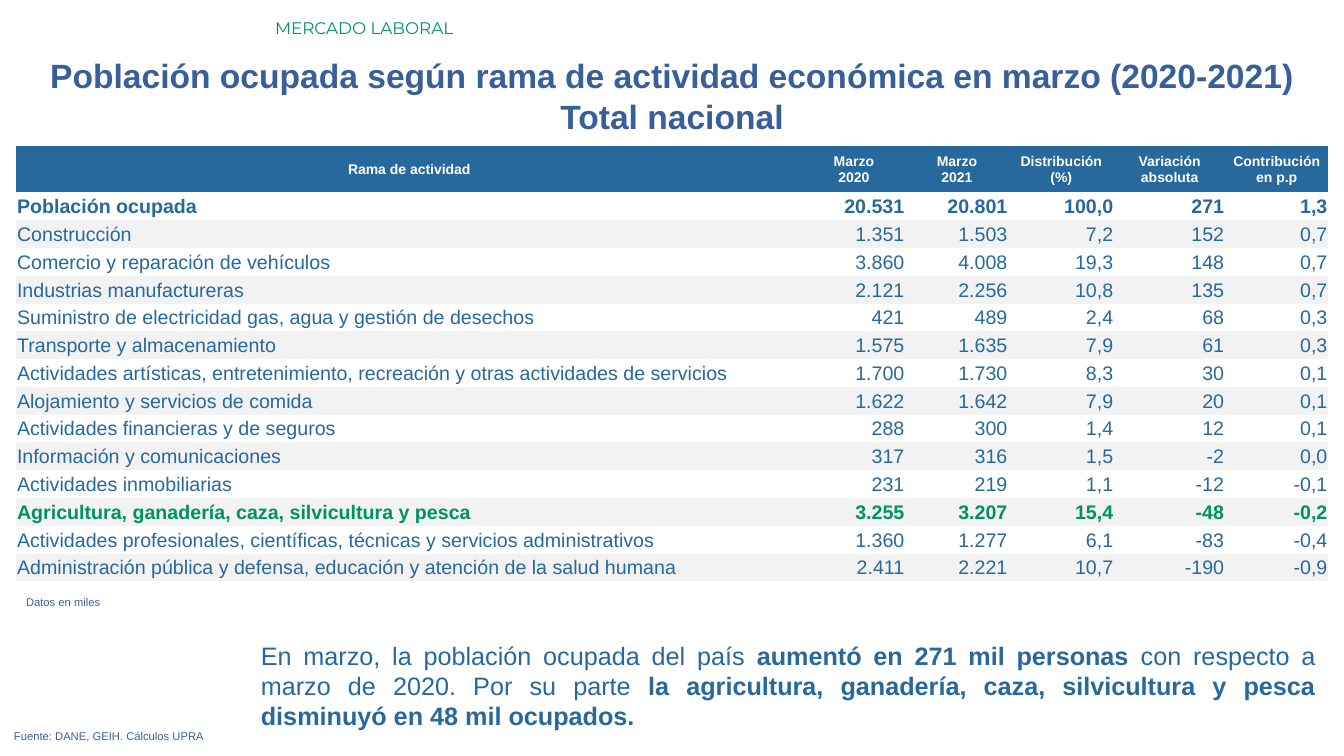
from pptx import Presentation
from pptx.dml.color import RGBColor
from pptx.enum.text import MSO_ANCHOR, MSO_AUTO_SIZE, PP_ALIGN
from pptx.oxml.ns import qn
from pptx.util import Pt

LEFT, MID, RIGHT, JUST = PP_ALIGN.LEFT, PP_ALIGN.CENTER, PP_ALIGN.RIGHT, PP_ALIGN.JUSTIFY
GROW = MSO_AUTO_SIZE.SHAPE_TO_FIT_TEXT
CENTER = MSO_ANCHOR.MIDDLE
HUES = {"blue": "27689D", "navy": "395F9B", "green": "009267", "leaf": "009167",
        "gray": "F2F2F2", "white": "FFFFFF"}

deck = Presentation()
deck.slide_width, deck.slide_height = Pt(960), Pt(540)
slide = deck.slides.add_slide(deck.slide_layouts[6])


def style(par, align, size, hue, bold=False, face="Arial"):
    par.alignment = align
    for run in par.runs:
        run.font.name = face
        run.font.size = Pt(size)
        run.font.bold = bold
        run.font.color.rgb = RGBColor.from_string(HUES[hue])


def add_text(spot, lines, align, size, hue, bold=False, face="Arial"):
    box = slide.shapes.add_textbox(*[Pt(n) for n in spot])
    frame = box.text_frame
    frame.word_wrap = True
    frame.auto_size = GROW
    frame.text = lines
    for par in frame.paragraphs:
        style(par, align, size, hue, bold, face)
    return frame.paragraphs[0]


add_text((189.4, 9.4, 770, 21.8), "MERCADO LABORAL", LEFT, 12, "green", face="Montserrat")
add_text((0, 36, 960, 65.5),
         "Población ocupada según rama de actividad económica en marzo (2020-2021)\nTotal nacional",
         MID, 24, "navy", True)

note = add_text((179.3, 453.6, 767.5, 72.7), "", JUST, 18, "blue")
parts = [
    "En marzo, la población ocupada del país ",
    "aumentó en 271 mil personas ",
    "con respecto a marzo de 2020. Por su parte ",
    "la agricultura, ganadería, caza, silvicultura y pesca disminuyó en 48 mil ocupados.",
]
for part in parts:
    note.add_run().text = part
style(note, JUST, 18, "blue")
for run in note.runs[1::2]:
    run.font.bold = True

add_text((2.9, 517.7, 929.5, 17), "Fuente: DANE, GEIH. Cálculos UPRA", JUST, 8, "navy")

rows = [
    ("Rama de actividad", "Marzo\v2020", "Marzo\v2021", "Distribución\n(%)",
     "Variación\nabsoluta", "Contribución\nen p.p"),
    ("Población ocupada", "20.531", "20.801", "100,0", "271", "1,3"),
    ("Construcción", "1.351", "1.503", "7,2", "152", "0,7"),
    ("Comercio y reparación de vehículos", "3.860", "4.008", "19,3", "148", "0,7"),
    ("Industrias manufactureras", "2.121", "2.256", "10,8", "135", "0,7"),
    ("Suministro de electricidad gas, agua y gestión de desechos",
     "421", "489", "2,4", "68", "0,3"),
    ("Transporte y almacenamiento", "1.575", "1.635", "7,9", "61", "0,3"),
    ("Actividades artísticas, entretenimiento, recreación y otras actividades de servicios",
     "1.700", "1.730", "8,3", "30", "0,1"),
    ("Alojamiento y servicios de comida", "1.622", "1.642", "7,9", "20", "0,1"),
    ("Actividades financieras y de seguros", "288", "300", "1,4", "12", "0,1"),
    ("Información y comunicaciones", "317", "316", "1,5", "-2", "0,0"),
    ("Actividades inmobiliarias", "231", "219", "1,1", "-12", "-0,1"),
    ("Agricultura, ganadería, caza, silvicultura y pesca",
     "3.255", "3.207", "15,4", "-48", "-0,2"),
    ("Actividades profesionales, científicas, técnicas y servicios administrativos",
     "1.360", "1.277", "6,1", "-83", "-0,4"),
    ("Administración pública y defensa, educación y atención de la salud humana",
     "2.411", "2.221", "10,7", "-190", "-0,9"),
]
widths = [561.6, 73.6, 73.6, 75.6, 79.2, 73.8]
total, farm = 1, 12

holder = slide.shapes.add_table(len(rows), len(widths), Pt(11.5), Pt(104.4),
                                Pt(sum(widths)), Pt(311))
holder.element.find(".//" + qn("a:tableStyleId")).text = "{2D5ABB26-0587-4C30-8999-92F81FD0307C}"
table = holder.table
table.first_row = True
table.horz_banding = False
for col, width in zip(table.columns, widths):
    col.width = Pt(width)

for i, row in enumerate(rows):
    table.rows[i].height = Pt(19.85 if i else 33.1)
    for j, value in enumerate(row):
        cell = table.cell(i, j)
        cell.margin_left = cell.margin_right = cell.margin_top = Pt(0.7)
        cell.margin_bottom = Pt(0)
        cell.vertical_anchor = CENTER
        if i % 2 and i:
            cell.fill.background()
        else:
            cell.fill.solid()
            cell.fill.fore_color.rgb = RGBColor.from_string(HUES["gray" if i else "blue"])
        cell.text_frame.text = value
        for par in cell.text_frame.paragraphs:
            if i == 0:
                style(par, MID, 10, "white", True)
            else:
                style(par, RIGHT if j else LEFT, 14, "leaf" if i == farm else "blue",
                      i in (total, farm))

add_text((11.5, 421.9, 929.5, 17), "Datos en miles", JUST, 8, "navy")

deck.save("out.pptx")
